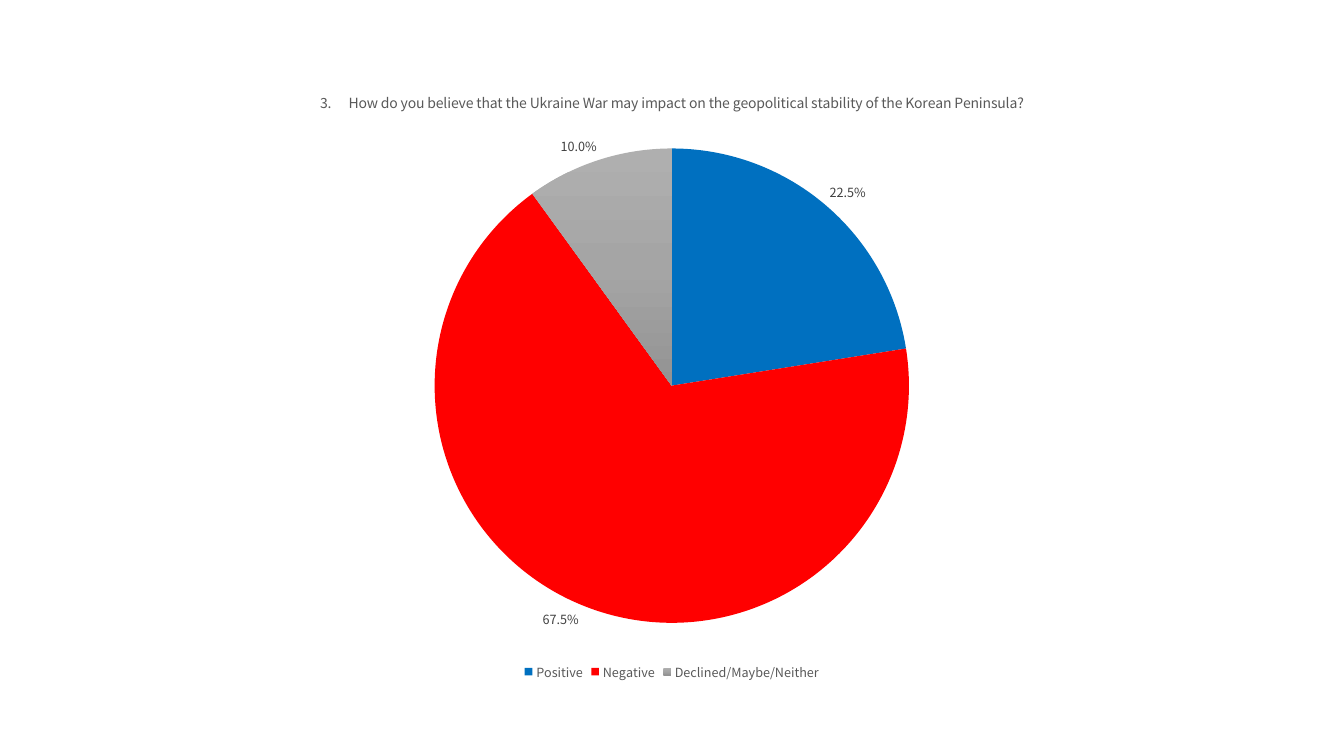
from copy import deepcopy

from pptx import Presentation
from pptx.chart.data import CategoryChartData
from pptx.dml.color import RGBColor
from pptx.enum.chart import XL_CHART_TYPE, XL_LABEL_POSITION, XL_LEGEND_POSITION
from pptx.util import Cm, Pt

QUESTION = (
    "3.\tHow do you believe that the Ukraine War may impact on "
    "the geopolitical stability of the Korean Peninsula?"
)
ANSWERS = {"Positive": 0.225, "Negative": 0.675, "Declined/Maybe/Neither": 0.1}
SLICE_COLOURS = [["0070C0"], ["FF0000"], ["AFAFAF", "A5A5A5", "939393"]]


def colour(value):
    """Turn a hex string into a colour."""
    return RGBColor.from_string(value)


class SurveySlide:
    """Hold the style and the current slide."""

    font_name = "Noto Sans CJK KR"
    text_colour = "595959"
    label_colour = "404040"

    def __init__(self, presentation):
        """Add a blank slide to the presentation."""
        self.slide = presentation.slides.add_slide(presentation.slide_layouts[6])

    def style_font(self, font, size, font_colour):
        """Apply the slide's font with a size and a colour."""
        font.name = self.font_name
        font.size = Pt(size)
        font.bold = False
        font.color.rgb = colour(font_colour)

    def fill_slice(self, point, colours):
        """Fill a slice with one colour or a downward gradient of several."""
        fill = point.format.fill
        if len(colours) == 1:
            fill.solid()
            fill.fore_color.rgb = colour(colours[0])
            return
        fill.gradient()
        fill.gradient_angle = 270
        stop_list = point.format._element.xpath(".//a:gsLst")[0]
        while len(stop_list) < len(colours):
            stop_list.append(deepcopy(stop_list[0]))
        for index, (stop, value) in enumerate(zip(fill.gradient_stops, colours)):
            stop.position = index / (len(colours) - 1)
            stop.color.rgb = colour(value)

    def add_pie(self, title, answers, slice_colours, left, top, width, height):
        """Add a titled pie chart with percentage labels and a legend."""
        data = CategoryChartData(number_format="0.0%")
        data.categories = list(answers)
        data.add_series(title, answers.values())
        chart = self.slide.shapes.add_chart(
            XL_CHART_TYPE.PIE, left, top, width, height, data
        ).chart
        self.style_font(chart.font, 10, "000000")

        paragraph = chart.chart_title.text_frame.paragraphs[0]
        paragraph.text = title
        self.style_font(paragraph.font, 10, self.text_colour)
        chart.chart_title.include_in_layout = False

        chart.has_legend = True
        chart.legend.position = XL_LEGEND_POSITION.BOTTOM
        chart.legend.include_in_layout = False
        self.style_font(chart.legend.font, 9, self.text_colour)

        plot = chart.plots[0]
        plot.has_data_labels = True
        labels = plot.data_labels
        labels.show_value = True
        labels.show_percentage = False
        labels.number_format = "0.0%"
        labels.number_format_is_linked = False
        labels.position = XL_LABEL_POSITION.OUTSIDE_END
        self.style_font(labels.font, 9, self.label_colour)

        for index, colours in enumerate(slice_colours):
            self.fill_slice(plot.series[0].points[index], colours)


def main():
    """Build and save the presentation."""
    presentation = Presentation()
    presentation.slide_width = Cm(33.87)
    presentation.slide_height = Cm(19.05)
    survey = SurveySlide(presentation)
    survey.add_pie(
        QUESTION, ANSWERS, SLICE_COLOURS, Cm(1.78), Cm(1.78), Cm(30.3), Cm(15.47)
    )
    presentation.save("out.pptx")


if __name__ == "__main__":
    main()
